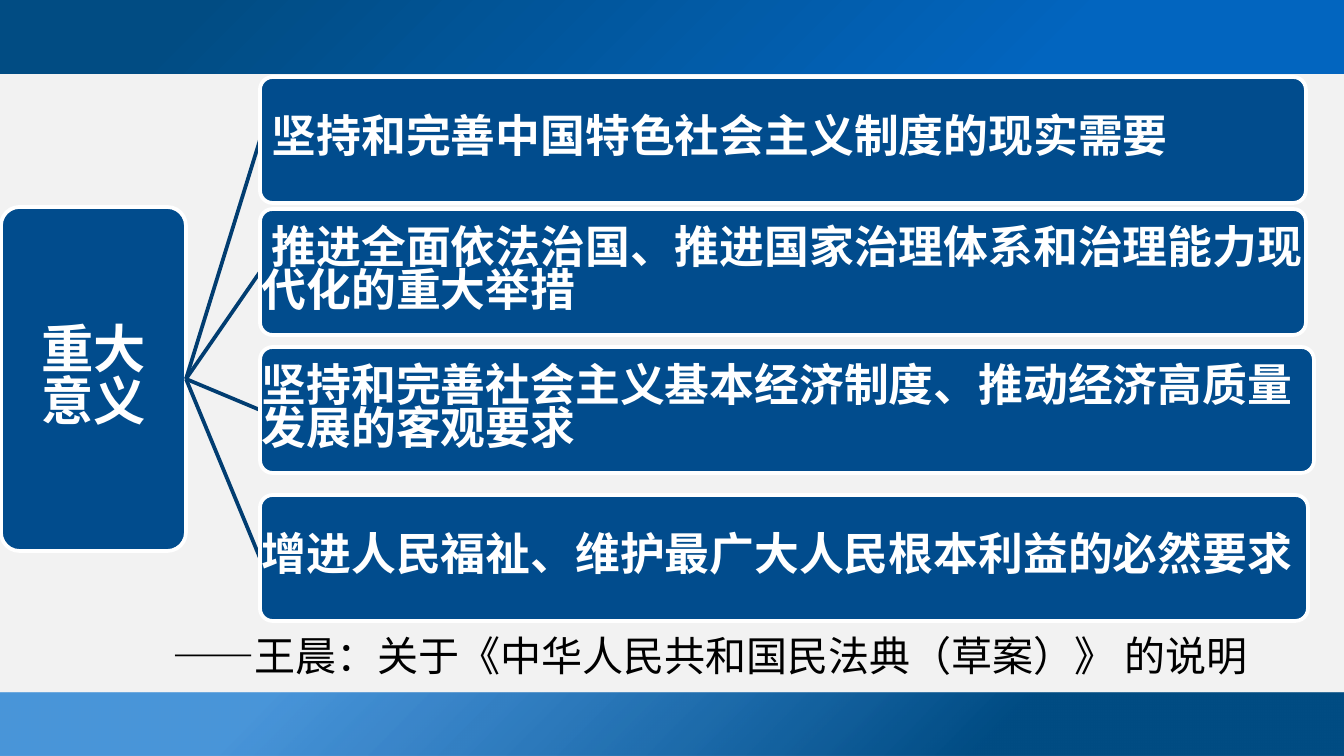
from lxml import etree
from pptx import Presentation
from pptx.dml.color import RGBColor
from pptx.enum.shapes import MSO_CONNECTOR, MSO_SHAPE
from pptx.enum.text import MSO_ANCHOR as ANCHOR, PP_ALIGN as ALIGN
from pptx.oxml import parse_xml
from pptx.oxml.ns import nsdecls, qn
from pptx.util import Pt

PX = 914400 / 134.4
FONT = "Noto Sans CJK SC"
COLORS = {"paper": "F2F2F2", "box": "014C8D", "link": "013D71", "white": "FFFFFF",
          "black": "000000", "navy": "014C83", "blue": "0265BF", "sky": "026DCE"}

BANDS = [
    ((0, 693, 1344, 63), [(26, "navy", 100), (80, "sky", 70)]),
    ((0, -3, 1344, 77), [(21, "blue", 100), (86, "navy", 100)]),
]
ROOT = ["重大", "意义"]
ROOT_BOX = (1, 207, 185, 344)
REASON_LEFT, REASON_HEIGHT = 260, 126
REASONS = [
    (" 坚持和完善中国特色社会主义制度的现实需要", 77, 1046),
    (" 推进全面依法治国、推进国家治理体系和治理能力现代化的重大举措", 209, 1046),
    ("坚持和完善社会主义基本经济制度、推动经济高质量发展的客观要求", 347, 1054),
    ("增进人民福祉、维护最广大人民根本利益的必然要求", 495, 1048),
]
SOURCE = "——王晨：关于《中华人民共和国民法典（草案）》 的说明"
SOURCE_BOX = (159, 624, 1185, 63)


def px(*values):
    return [round(v * PX) for v in values]


def rgb(name):
    return RGBColor.from_string(COLORS[name])


def write(sp, lines, size, color="white", bold=True, align=ALIGN.LEFT, spacing=1.0, inset=None):
    tf = sp.text_frame
    tf.word_wrap = True
    tf.vertical_anchor = ANCHOR.MIDDLE
    if inset is not None:
        tf.margin_left = tf.margin_right = tf.margin_top = tf.margin_bottom = px(inset)[0]
    for i, line in enumerate(lines):
        p = tf.paragraphs[0] if i == 0 else tf.add_paragraph()
        p.alignment, p.line_spacing = align, spacing
        r = p.add_run()
        r.text = line
        r.font.size, r.font.bold, r.font.name = Pt(size), bold, FONT
        r.font.color.rgb = rgb(color)
        etree.SubElement(r.font._element, qn("a:ea")).set("typeface", FONT)


def add_band(box, stops):
    sp = slide.shapes.add_shape(MSO_SHAPE.RECTANGLE, *px(*box))
    sp.shadow.inherit = False
    sp.line.fill.background()
    gs = "".join(
        f'<a:gs pos="{pos * 1000}"><a:srgbClr val="{COLORS[c]}">'
        f'<a:alpha val="{alpha * 1000}"/></a:srgbClr></a:gs>' for pos, c, alpha in stops)
    sp._element.spPr.find(qn("a:prstGeom")).addnext(parse_xml(
        f'<a:gradFill {nsdecls("a")}><a:gsLst>{gs}</a:gsLst>'
        '<a:path path="circle"><a:fillToRect l="100000" t="100000"/></a:path></a:gradFill>'))


def add_box(box):
    sp = slide.shapes.add_shape(MSO_SHAPE.ROUNDED_RECTANGLE, *px(*box))
    sp.adjustments[0] = 0.1
    sp.shadow.inherit = False
    sp.fill.solid()
    sp.fill.fore_color.rgb = rgb("box")
    sp.line.color.rgb = rgb("white")
    sp.line.width = Pt(2)
    return sp


def link(start, end):
    line = slide.shapes.add_connector(MSO_CONNECTOR.STRAIGHT, 0, 0, 0, 0)
    line.begin_connect(start, 3)
    line.end_connect(end, 1)
    line.line.color.rgb = rgb("link")
    line.line.width = Pt(2)
    etree.SubElement(line._element.spPr, qn("a:effectLst"))
    end._element.addprevious(line._element)


prs = Presentation()
prs.slide_width, prs.slide_height = px(1344, 756)
slide = prs.slides.add_slide(prs.slide_layouts[6])
slide.background.fill.solid()
slide.background.fill.fore_color.rgb = rgb("paper")

for box, stops in BANDS:
    add_band(box, stops)

root = add_box(ROOT_BOX)
write(root, ROOT, 28, align=ALIGN.CENTER, spacing=0.82, inset=2)

for text, top, width in REASONS:
    reason = add_box((REASON_LEFT, top, width, REASON_HEIGHT))
    write(reason, [text], 24, spacing=0.8, inset=-2)
    link(root, reason)

write(slide.shapes.add_textbox(*px(*SOURCE_BOX)), [SOURCE], 22, color="black", bold=False)

prs.save("out.pptx")
